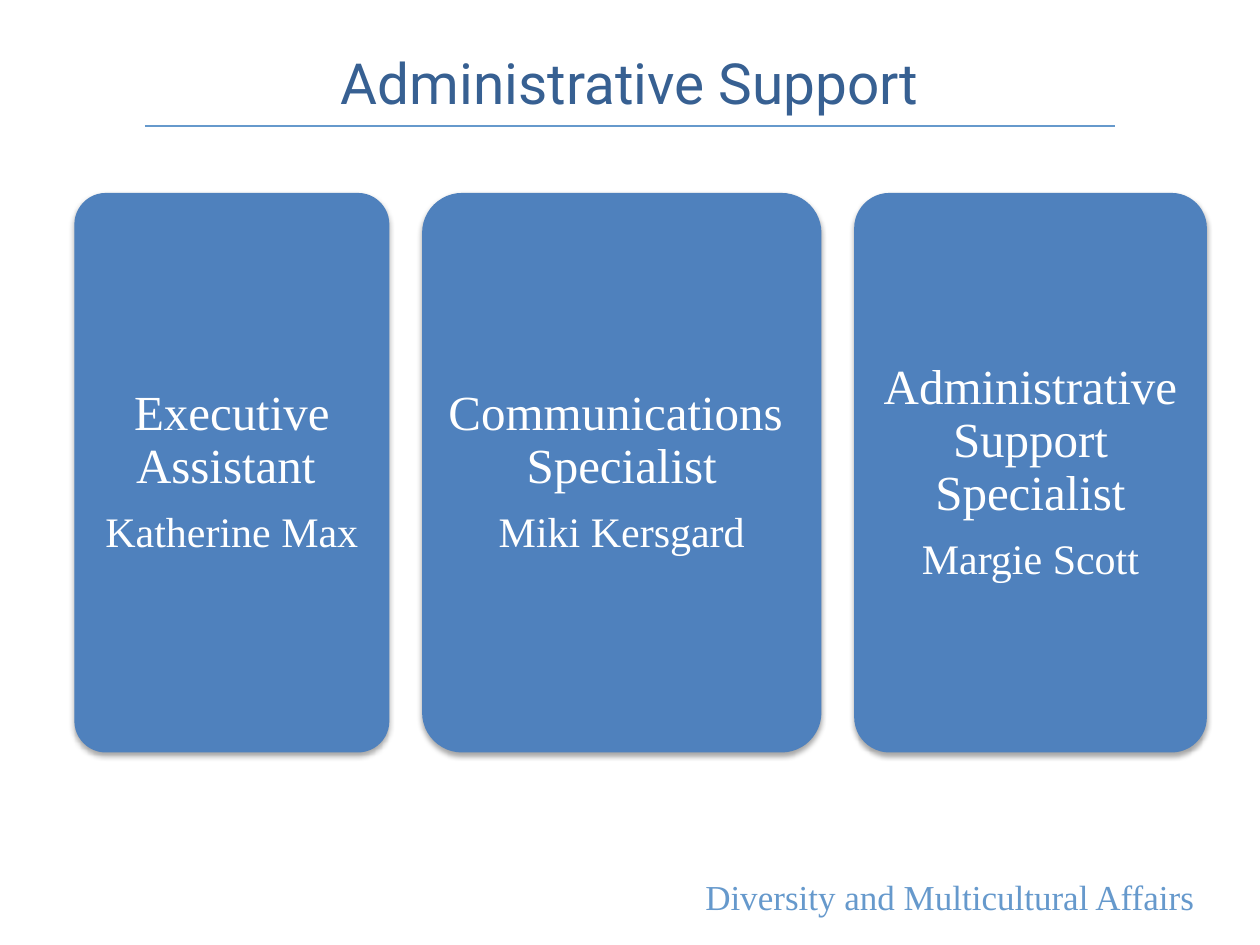
"""Builds the administrative support slide with three staff cards."""
import dataclasses

import lxml.etree
import pptx
import pptx.dml.color
import pptx.enum.shapes
import pptx.enum.text
import pptx.oxml.ns
import pptx.util

Cm = pptx.util.Cm
Pt = pptx.util.Pt
Align = pptx.enum.text.PP_ALIGN
Anchor = pptx.enum.text.MSO_ANCHOR
qualify = pptx.oxml.ns.qn


@dataclasses.dataclass(frozen=True)
class Theme:
    title_color: str = "376092"
    accent_color: str = "6699CC"
    card_color: str = "4F81BD"
    card_text_color: str = "FFFFFF"
    shadow_color: str = "000000"
    title_font: str = "Roboto"
    body_font: str = "Times New Roman"
    title_size: float = 32.4
    role_size: float = 28
    name_size: float = 24
    footer_size: float = 20


class SlideBuilder:
    def __init__(self, slide, theme):
        self.slide = slide
        self.theme = theme

    def format_paragraph(self, paragraph, size, color, font, alignment):
        paragraph.alignment = alignment
        for run in paragraph.runs:
            run.font.size = Pt(size)
            run.font.name = font
            run.font.color.rgb = pptx.dml.color.RGBColor.from_string(color)
        for line_break in paragraph._p.findall(qualify("a:br")):
            properties = lxml.etree.SubElement(
                line_break, qualify("a:rPr"), sz=str(round(size * 100)))
            lxml.etree.SubElement(properties, qualify("a:latin"), typeface=font)

    def add_text(self, text, box, size, color, font, alignment, anchor):
        text_frame = self.slide.shapes.add_textbox(*map(Cm, box)).text_frame
        text_frame.word_wrap = True
        text_frame.vertical_anchor = anchor
        text_frame.text = text
        self.format_paragraph(text_frame.paragraphs[0], size, color, font, alignment)

    def add_rule(self, left, right, top):
        connector = self.slide.shapes.add_connector(
            pptx.enum.shapes.MSO_CONNECTOR.STRAIGHT, Cm(left), Cm(top), Cm(right), Cm(top))
        connector.line.width = Pt(0.75)
        connector.line.color.rgb = pptx.dml.color.RGBColor.from_string(self.theme.accent_color)
        self.add_effects(connector)

    def add_effects(self, shape):
        return lxml.etree.SubElement(shape._element.spPr, qualify("a:effectLst"))

    def add_shadow(self, shape):
        shadow = lxml.etree.SubElement(
            self.add_effects(shape), qualify("a:outerShdw"),
            blurRad=str(Pt(3.1)), dist=str(Pt(1.8)), dir="5400000", rotWithShape="0")
        color = lxml.etree.SubElement(shadow, qualify("a:srgbClr"), val=self.theme.shadow_color)
        lxml.etree.SubElement(color, qualify("a:alpha"), val="35000")

    def add_card(self, role, name, box):
        theme = self.theme
        card = self.slide.shapes.add_shape(
            pptx.enum.shapes.MSO_SHAPE.ROUNDED_RECTANGLE, *map(Cm, box))
        card.adjustments[0] = 0.1
        card.fill.solid()
        card.fill.fore_color.rgb = pptx.dml.color.RGBColor.from_string(theme.card_color)
        card.line.fill.background()
        self.add_shadow(card)
        text_frame = card.text_frame
        text_frame.word_wrap = True
        text_frame.vertical_anchor = Anchor.MIDDLE
        text_frame.margin_left = text_frame.margin_right = Cm(0.2)
        text_frame.margin_top = text_frame.margin_bottom = Cm(0.3)
        text_frame.text = f"{role}\n{name}"
        for paragraph, size in zip(text_frame.paragraphs, (theme.role_size, theme.name_size)):
            paragraph.line_spacing = 0.9
            self.format_paragraph(
                paragraph, size, theme.card_text_color, theme.body_font, Align.CENTER)
        text_frame.paragraphs[0].space_after = Pt(9.8)


def main():
    presentation = pptx.Presentation()
    presentation.slide_width = Cm(25.4)
    presentation.slide_height = Cm(19.05)
    theme = Theme()
    builder = SlideBuilder(presentation.slides.add_slide(presentation.slide_layouts[6]), theme)

    builder.add_rule(2.92, 22.48, 2.54)
    builder.add_text("Diversity and Multicultural Affairs", (13.33, 17.53, 11, 1.12),
                     theme.footer_size, theme.accent_color, theme.body_font,
                     Align.RIGHT, Anchor.TOP)
    builder.add_text("Administrative Support", (1.27, 0.76, 22.86, 1.78),
                     theme.title_size, theme.title_color, theme.title_font,
                     Align.CENTER, Anchor.MIDDLE)

    cards = [
        ("Executive Assistant ", "Katherine Max", 6.35),
        ("Communications \vSpecialist", "Miki Kersgard", 8.05),
        ("Administrative Support Specialist", "Margie Scott", 7.11),
    ]
    left, gap = 1.5, 0.66
    for role, name, width in cards:
        builder.add_card(role, name, (left, 3.89, width, 11.28))
        left += width + gap

    presentation.save("out.pptx")


if __name__ == "__main__":
    main()
